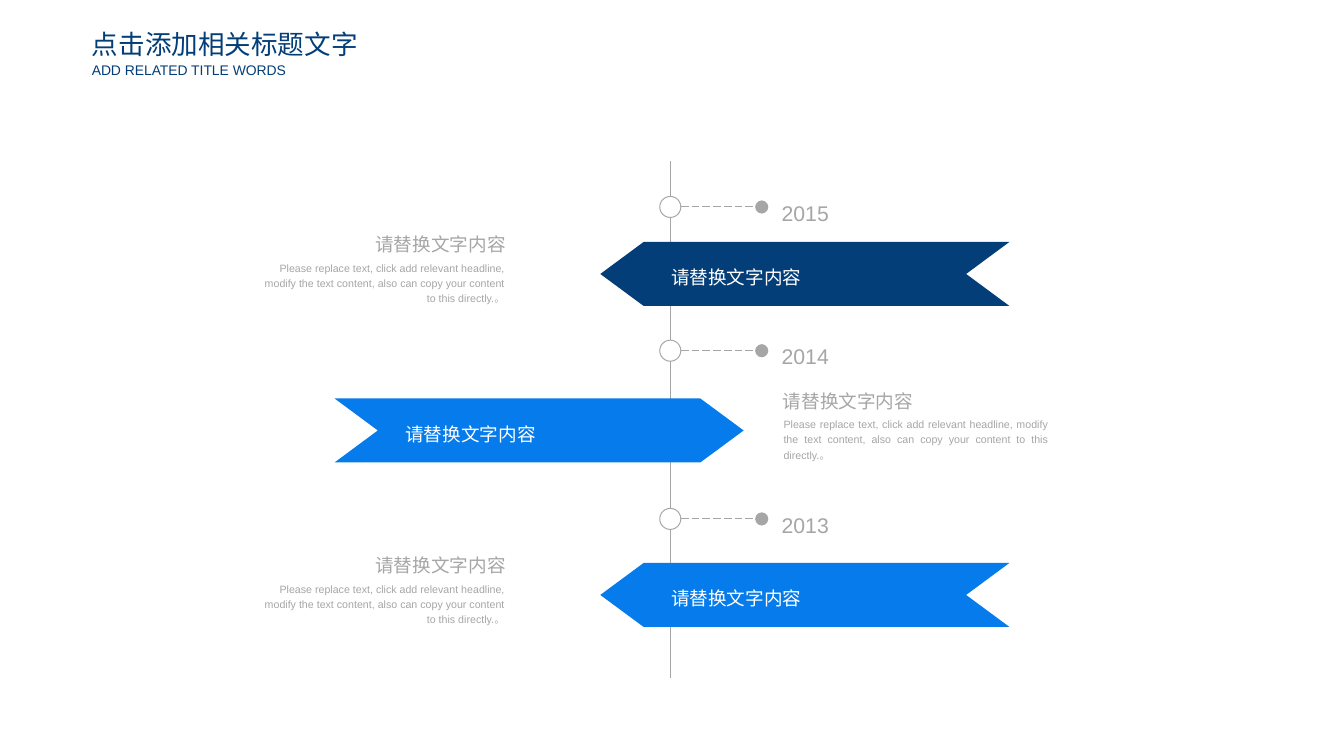
from pptx import Presentation
from pptx import util as u
from pptx.dml.color import RGBColor
from pptx.enum import dml, shapes, text
from pptx.oxml.ns import qn
from lxml import etree

Cm = u.Cm
NAVY, BLUE, GREY, WHITE = "033E78", "067BEC", "A6A6A6", "FFFFFF"
LEFT, RIGHT, JUSTIFY = text.PP_ALIGN.LEFT, text.PP_ALIGN.RIGHT, text.PP_ALIGN.JUSTIFY
HEADING = "请替换文字内容"
BODY = ("Please replace text, click add relevant headline, modify the text content, "
        "also can copy your content to this directly.。")

prs = Presentation()
prs.slide_width, prs.slide_height = Cm(35.71), Cm(20.09)
s = prs.slides.add_slide(prs.slide_layouts[5])


def add_text(words, x, y, w, h, size, color=GREY, align=LEFT, spacing=1.2,
             wrap=False, inset=True, sp=None):
    """Write one paragraph in a new text box, or in the placeholder sp."""
    sp = sp or s.shapes.add_textbox(0, 0, 0, 0)
    sp.left, sp.top, sp.width, sp.height = Cm(x), Cm(y), Cm(w), Cm(h)
    tf = sp.text_frame
    tf.word_wrap = wrap
    tf.auto_size = text.MSO_AUTO_SIZE.NONE
    tf.vertical_anchor = text.MSO_ANCHOR.TOP
    if not inset:
        tf.margin_left = tf.margin_top = tf.margin_right = tf.margin_bottom = 0
    p = tf.paragraphs[0]
    p.alignment, p.line_spacing = align, spacing
    r = p.add_run()
    r.text = words
    r.font.name, r.font.size = "Arial", u.Pt(size)
    r.font.color.rgb = RGBColor.from_string(color)


def add_line(x1, y1, x2, y2, dotted=False):
    """Draw a thin grey line; a dotted one is dashed and ends in a dot."""
    ln = s.shapes.add_connector(shapes.MSO_CONNECTOR.STRAIGHT, Cm(x1), Cm(y1), Cm(x2), Cm(y2))
    ln.line.color.rgb = RGBColor.from_string(GREY)
    ln.line.width = u.Pt(0.75)
    if dotted:
        ln.line.dash_style = dml.MSO_LINE.LONG_DASH
        etree.SubElement(ln.line._get_or_add_ln(), qn("a:tailEnd"), type="oval", w="lg", len="lg")
    etree.SubElement(ln._element.spPr, qn("a:effectLst"))


# Title and subtitle
add_text("点击添加相关标题文字", 2.44, 0.74, 7.11, 0.86, 20, NAVY,
         spacing=1, inset=False, sp=s.shapes.title)
add_text("ADD RELATED TITLE WORDS", 2.44, 1.63, 5.28, 0.46, 10.5, NAVY,
         spacing=1, inset=False)

# Time axis
AXIS, DOT = 17.81, 0.56
add_line(AXIS, 4.29, AXIS, 18.03)

# Years: circle centre, year top, arrow top, arrow colour, arrow points left
rows = [
    ("2015", 5.5, 5.05, 6.43, NAVY, True),
    ("2014", 9.32, 8.86, 10.59, BLUE, False),
    ("2013", 13.79, 13.36, 14.96, BLUE, True),
]
for year, centre, year_top, top, color, points_left in rows:
    # Circle on the axis, with its dashed line and year
    circle = s.shapes.add_shape(shapes.MSO_SHAPE.OVAL, Cm(AXIS - DOT / 2),
                                Cm(centre - DOT / 2), Cm(DOT), Cm(DOT))
    circle.shadow.inherit = False
    circle.fill.solid()
    circle.fill.fore_color.rgb = RGBColor.from_string(WHITE)
    circle.line.color.rgb = RGBColor.from_string(GREY)
    circle.line.width = u.Pt(0.75)
    add_line(AXIS + DOT / 2, centre, 20.24, centre, dotted=True)
    add_text(year, 20.52, year_top, 1.78, 1.07, 16, align=JUSTIFY)

    # Arrow with its label
    x = 15.95 if points_left else 8.89
    arrow = s.shapes.add_shape(shapes.MSO_SHAPE.CHEVRON, Cm(x), Cm(top), Cm(10.87), Cm(1.7))
    arrow.adjustments[0] = 0.677
    arrow.rotation = 180 if points_left else 0
    arrow.shadow.inherit = False
    arrow.fill.solid()
    arrow.fill.fore_color.rgb = RGBColor.from_string(color)
    arrow.line.fill.background()
    add_text(HEADING, x + 1.63, top + 0.4, 3.96, 0.97, 14, WHITE, JUSTIFY)

    # Heading and description on the free side
    if points_left:
        add_text(HEADING, 9.68, top - 0.48, 4.01, 0.97, 14, align=RIGHT)
        add_text(BODY, 6.58, top + 0.33, 7.09, 1.5, 8, align=RIGHT, wrap=True)
    else:
        add_text(HEADING, 20.55, top - 0.48, 4.01, 0.97, 14)
        add_text(BODY, 20.57, top + 0.33, 7.54, 1.5, 8, align=JUSTIFY, wrap=True)

prs.save("out.pptx")
